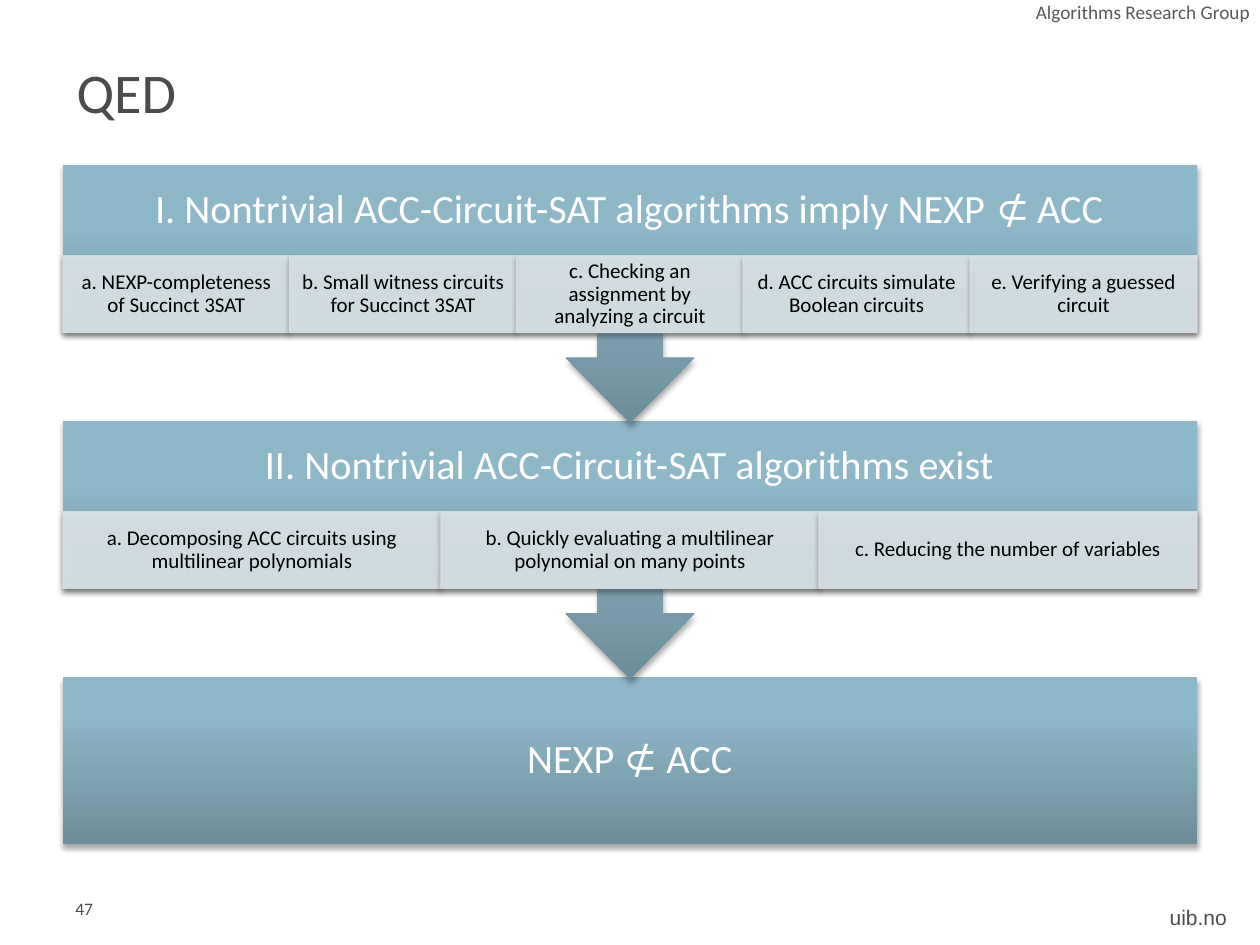
from copy import deepcopy
from dataclasses import dataclass

from lxml import etree
from pptx import Presentation
from pptx.dml.color import RGBColor
from pptx.enum.shapes import MSO_SHAPE
from pptx.enum.text import MSO_ANCHOR, PP_ALIGN
from pptx.oxml.ns import qn
from pptx.util import Pt

PX = 9144
RECTANGLE = MSO_SHAPE.RECTANGLE
LEFT, CENTER, RIGHT = PP_ALIGN.LEFT, PP_ALIGN.CENTER, PP_ALIGN.RIGHT
TOP, MIDDLE = MSO_ANCHOR.TOP, MSO_ANCHOR.MIDDLE

BAND_LEFT, BAND_WIDTH, BAND_HEIGHT = 50, 900, 133
STEP_OFFSET, STEP_HEIGHT = 72, 61
ARROW_HEIGHT, ARROW_NECK, ARROW_HALF, STEM_HALF = 72, 20, 51, 26
BAND_STOPS = [(0, "6D8E9A"), (0.8, "8EB8C8"), (1, "8DBACA")]
GREY = "4E4A48"


@dataclass
class Stage:
    """A heading band with its row of steps and an arrow below."""
    top: int
    heading: str
    steps: list[str]


@dataclass
class Label:
    """A free-standing line of text."""
    text: str
    box: tuple[int, int, int, int]
    size: int
    color: str = GREY
    font: str = "Calibri"
    align: PP_ALIGN = LEFT
    anchor: MSO_ANCHOR = TOP
    insets: tuple[int, int, int, int] = (10, 0, 10, 5)
    wrap: bool = True


STAGES = [
    Stage(334, "II. Nontrivial ACC-Circuit-SAT algorithms exist", [
        "a. Decomposing ACC circuits using multilinear polynomials",
        "b. Quickly evaluating a multilinear polynomial on many points",
        "c. Reducing the number of variables",
    ]),
    Stage(131, "I. Nontrivial ACC-Circuit-SAT algorithms imply NEXP ⊄ ACC", [
        "a. NEXP-completeness of Succinct 3SAT",
        "b. Small witness circuits for Succinct 3SAT",
        "c. Checking an assignment by analyzing a circuit",
        "d. ACC circuits simulate Boolean circuits",
        "e. Verifying a guessed circuit",
    ]),
]
LABELS = [
    Label("uib.no", (918, 713, 66, 30), 12, font="Arial", align=CENTER,
          insets=(10, 5, 10, 5), wrap=False),
    Label("QED", (51, 38, 900, 69), 32, anchor=MIDDLE, insets=(10, 5, 10, 5)),
    Label("Algorithms Research Group", (469, 0, 533, 20), 11, "595959",
          align=RIGHT, insets=(10, 0, 10, 0)),
    Label("47", (50, 713, 214, 30), 10),
]


def px(*lengths: int) -> list[int]:
    """Turn px lengths into EMU."""
    return [length * PX for length in lengths]


def rgb(color: str) -> RGBColor:
    """Turn a hex string into a colour."""
    return RGBColor.from_string(color)


def write(shape, text: str, size: int, color: str, insets: tuple[int, int, int, int],
          align: PP_ALIGN = CENTER, anchor: MSO_ANCHOR = MIDDLE,
          font: str = "Calibri", wrap: bool = True, spacing: float = 0.9) -> None:
    """Set the single line of text of a shape."""
    frame = shape.text_frame
    frame.word_wrap = wrap
    frame.vertical_anchor = anchor
    (frame.margin_left, frame.margin_top,
     frame.margin_right, frame.margin_bottom) = px(*insets)
    paragraph = frame.paragraphs[0]
    paragraph.alignment = align
    paragraph.line_spacing = spacing
    run = paragraph.add_run()
    run.text = text
    run.font.name = font
    run.font.size = Pt(size)
    run.font.color.rgb = rgb(color)


def set_alpha(fill_owner, percent: int) -> None:
    """Make every solid colour below an element partly opaque."""
    for color in fill_owner.iter(qn("a:srgbClr")):
        etree.SubElement(color, qn("a:alpha"), val=str(percent * 1000))


def cast_shadow(shape) -> None:
    """Give a shape a soft shadow straight below it."""
    shape.shadow.inherit = False
    effects = shape._element.spPr.find(qn("a:effectLst"))
    shadow = etree.SubElement(effects, qn("a:outerShdw"), blurRad=str(Pt(3.1)),
                              dist=str(Pt(1.8)), dir="5400000", rotWithShape="0")
    etree.SubElement(shadow, qn("a:srgbClr"), val="000000")
    set_alpha(shadow, 35)


def style_band(band, heading: str, bottom_inset: int) -> None:
    """Apply the blue gradient, shadow and heading of a band."""
    band.fill.gradient()
    band.fill.gradient_angle = 90
    stop_list = band._element.spPr.find(qn("a:gradFill")).find(qn("a:gsLst"))
    stop_list.append(deepcopy(stop_list[0]))
    for stop, (position, color) in zip(band.fill.gradient_stops, BAND_STOPS):
        stop.position = position
        stop.color.rgb = rgb(color)
    band.line.fill.background()
    cast_shadow(band)
    write(band, heading, 23, "FFFFFF", (18, 18, 18, bottom_inset))


def draw_step(slide, text: str, left: int, top: int, width: int) -> None:
    """Draw one pale step box."""
    step = slide.shapes.add_shape(RECTANGLE, *px(left, top, width, STEP_HEIGHT))
    step.fill.solid()
    step.fill.fore_color.rgb = rgb("DEE7EB")
    step.line.color.rgb = rgb("D9E2E6")
    step.line.width = Pt(0.75)
    set_alpha(step._element.spPr, 90)
    cast_shadow(step)
    write(step, text, 12, "000000", (9, 2, 9, 2))


def draw_stage(slide, stage: Stage) -> None:
    """Draw a band ending in a down arrow, then its equal steps."""
    right = BAND_LEFT + BAND_WIDTH
    middle = BAND_LEFT + BAND_WIDTH // 2
    base = stage.top + BAND_HEIGHT
    neck = base + ARROW_NECK
    outline = slide.shapes.build_freeform(right, base, PX)
    outline.add_line_segments([
        (middle + STEM_HALF, base), (middle + STEM_HALF, neck),
        (middle + ARROW_HALF, neck), (middle, base + ARROW_HEIGHT),
        (middle - ARROW_HALF, neck), (middle - STEM_HALF, neck),
        (middle - STEM_HALF, base), (BAND_LEFT, base),
        (BAND_LEFT, stage.top), (right, stage.top),
    ])
    style_band(outline.convert_to_shape(), stage.heading, 151)
    width = BAND_WIDTH // len(stage.steps)
    for index, text in enumerate(stage.steps):
        draw_step(slide, text, BAND_LEFT + index * width, stage.top + STEP_OFFSET, width)


def draw_label(slide, label: Label) -> None:
    """Draw a line of text in its own box."""
    box = slide.shapes.add_textbox(*px(*label.box))
    write(box, label.text, label.size, label.color, label.insets, label.align,
          label.anchor, label.font, label.wrap, 1.0)


def main() -> None:
    """Build and save the slide."""
    deck = Presentation()
    deck.slide_width, deck.slide_height = px(1000, 750)
    slide = deck.slides.add_slide(deck.slide_layouts[6])
    conclusion = slide.shapes.add_shape(
        RECTANGLE, *px(BAND_LEFT, 537, BAND_WIDTH, BAND_HEIGHT))
    style_band(conclusion, "NEXP ⊄ ACC", 18)
    for stage in STAGES:
        draw_stage(slide, stage)
    for label in LABELS:
        draw_label(slide, label)
    deck.save("out.pptx")


if __name__ == "__main__":
    main()
